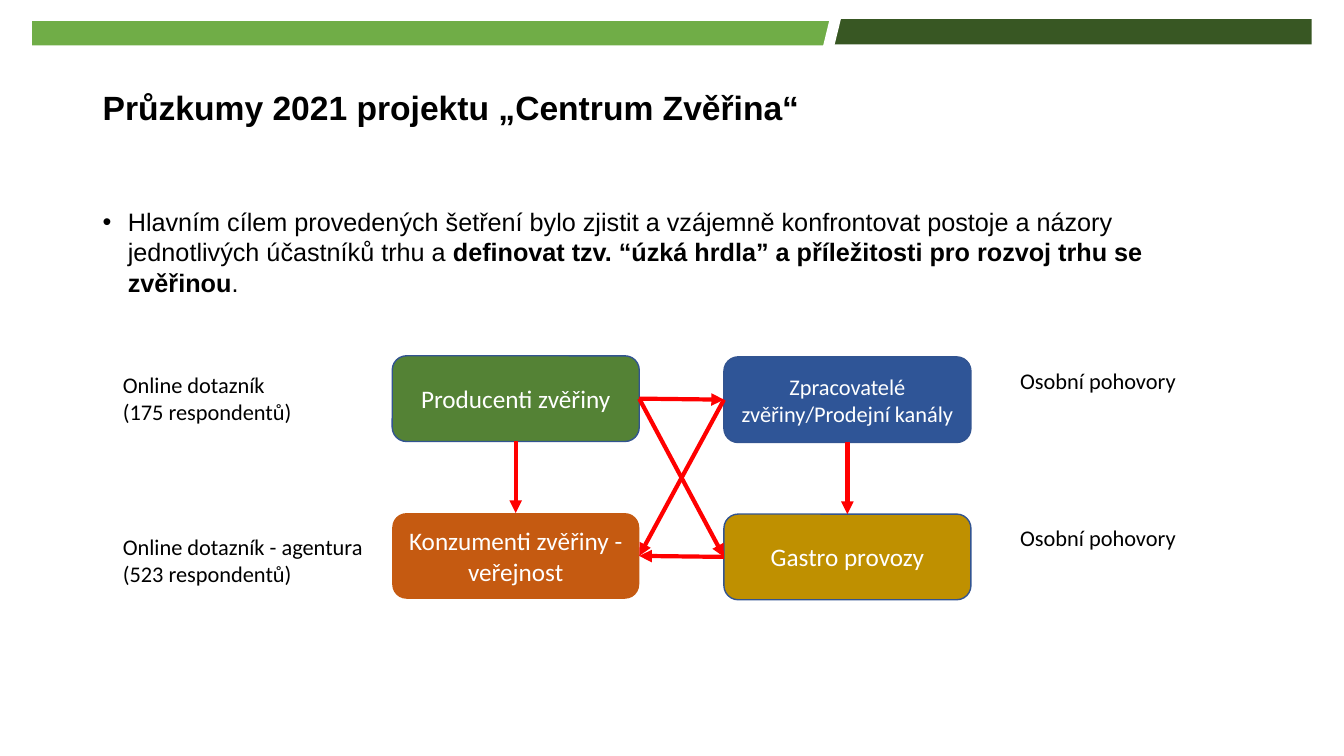
from lxml import etree
from pptx import Presentation, util as u
from pptx.dml.color import RGBColor
from pptx.enum import shapes, text
from pptx.oxml import ns

KIND = shapes.MSO_SHAPE
TOP, LEFT, BOTTOM, RIGHT = range(4)  # connection sites of a box


def color(code):
    return RGBColor.from_string(code)


class Deck:
    head, body = "Arial", "Calibri"
    ink, white, edge, red = "000000", "FFFFFF", "325491", "FF0000"

    def __init__(self):
        self.file = Presentation()
        self.file.slide_width = u.Inches(13.33)
        self.file.slide_height = u.Inches(7.5)
        self.slide = self.file.slides.add_slide(self.file.slide_layouts[6])

    def shape(self, kind, at, fill, line=None):
        item = self.slide.shapes.add_shape(kind, *map(u.Inches, at))
        item.shadow.inherit = False
        item.fill.solid()
        item.fill.fore_color.rgb = color(fill)
        if line:
            item.line.color.rgb = color(line)
            item.line.width = u.Pt(1)
        else:
            item.line.fill.background()
        return item

    def run(self, para, words, size, font, ink, bold=False):
        run = para.add_run()
        run.text = words
        run.font.size = u.Pt(size)
        run.font.name = font
        run.font.bold = bold
        run.font.color.rgb = color(ink)

    def box(self, at, fill, words, size=18, line=None):
        item = self.shape(KIND.ROUNDED_RECTANGLE, at, fill, line)
        frame = item.text_frame
        frame.word_wrap = True
        frame.vertical_anchor = text.MSO_ANCHOR.MIDDLE
        para = frame.paragraphs[0]
        para.alignment = text.PP_ALIGN.CENTER
        self.run(para, words, size, self.body, self.white)
        return item

    def frame(self, at, wrap=True):
        frame = self.slide.shapes.add_textbox(*map(u.Inches, at)).text_frame
        frame.word_wrap = wrap
        return frame

    def title(self, at, words):
        frame = self.frame(at)
        frame.vertical_anchor = text.MSO_ANCHOR.MIDDLE
        para = frame.paragraphs[0]
        para.line_spacing = 0.9
        self.run(para, words, 24, self.head, self.ink, True)

    def bullet(self, at, parts):
        para = self.frame(at).paragraphs[0]
        props = para._p.get_or_add_pPr()
        props.set("marL", str(u.Inches(0.25)))
        props.set("indent", str(-u.Inches(0.25)))
        etree.SubElement(props, ns.qn("a:buFont")).set("typeface", self.head)
        etree.SubElement(props, ns.qn("a:buChar")).set("char", "•")
        for words, bold in parts:
            self.run(para, words, 18, self.head, self.ink, bold)

    def label(self, at, lines):
        frame = self.frame(at, False)
        frame.auto_size = text.MSO_AUTO_SIZE.SHAPE_TO_FIT_TEXT
        for i, words in enumerate(lines):
            para = frame.add_paragraph() if i else frame.paragraphs[0]
            self.run(para, words, 16, self.body, self.ink)

    def arrow(self, start, out, end, into):
        item = self.slide.shapes.add_connector(shapes.MSO_CONNECTOR.STRAIGHT, 0, 0, 0, 0)
        item.begin_connect(start, out)
        item.end_connect(end, into)
        item.line.color.rgb = color(self.red)
        item.line.width = u.Pt(3)
        line = item.line._get_or_add_ln()
        etree.SubElement(line, ns.qn("a:tailEnd")).set("type", "triangle")
        etree.SubElement(item._element.spPr, ns.qn("a:effectLst"))


def main():
    deck = Deck()

    # Top band
    deck.shape(KIND.RECTANGLE, (0.32, 0.21, 7.94, 0.24), "70AD47")
    deck.shape(KIND.RECTANGLE, (8.25, 0.19, 4.76, 0.25), "385723")
    slash = deck.shape(KIND.PARALLELOGRAM, (8.16, 0.19, 0.18, 0.28), deck.white)
    slash.adjustments[0] = 0.38

    # Title and aim
    deck.title((0.92, 0.64, 11.5, 0.9), "Průzkumy 2021 projektu „Centrum Zvěřina“")
    deck.bullet((0.92, 2, 11.5, 1.17), [
        ("Hlavním cílem provedených šetření bylo zjistit a vzájemně konfrontovat "
         "postoje a názory jednotlivých účastníků trhu a ", False),
        ("definovat tzv. “úzká hrdla” a příležitosti pro rozvoj trhu se zvěřinou", True),
        (".", False)])

    # Market groups
    size = (2.45, 0.85)
    maker = deck.box((3.89, 3.53, *size), "548235", "Producenti zvěřiny", line=deck.edge)
    seller = deck.box((7.18, 3.54, *size), "2F5597",
                      "Zpracovatelé zvěřiny/Prodejní kanály", 16, deck.edge)
    eater = deck.box((3.89, 5.09, *size), "C55A11", "Konzumenti zvěřiny - veřejnost")
    gastro = deck.box((7.18, 5.1, *size), "BF9000", "Gastro provozy", line=deck.edge)

    # Survey methods
    deck.label((1.12, 3.63, 1.9, 0.64), ["Online dotazník", "(175 respondentů)"])
    deck.label((1.12, 5.24, 2.61, 0.64),
               ["Online dotazník - agentura", "(523 respondentů)"])
    for top in (3.59, 5.15):
        deck.label((10.02, top, 1.77, 0.37), ["Osobní pohovory"])

    # Links between groups
    for link in [(maker, RIGHT, seller, LEFT), (maker, RIGHT, gastro, LEFT),
                 (maker, BOTTOM, eater, TOP), (seller, LEFT, eater, RIGHT),
                 (seller, BOTTOM, gastro, TOP), (gastro, LEFT, eater, RIGHT)]:
        deck.arrow(*link)

    deck.file.save("out.pptx")


if __name__ == "__main__":
    main()
